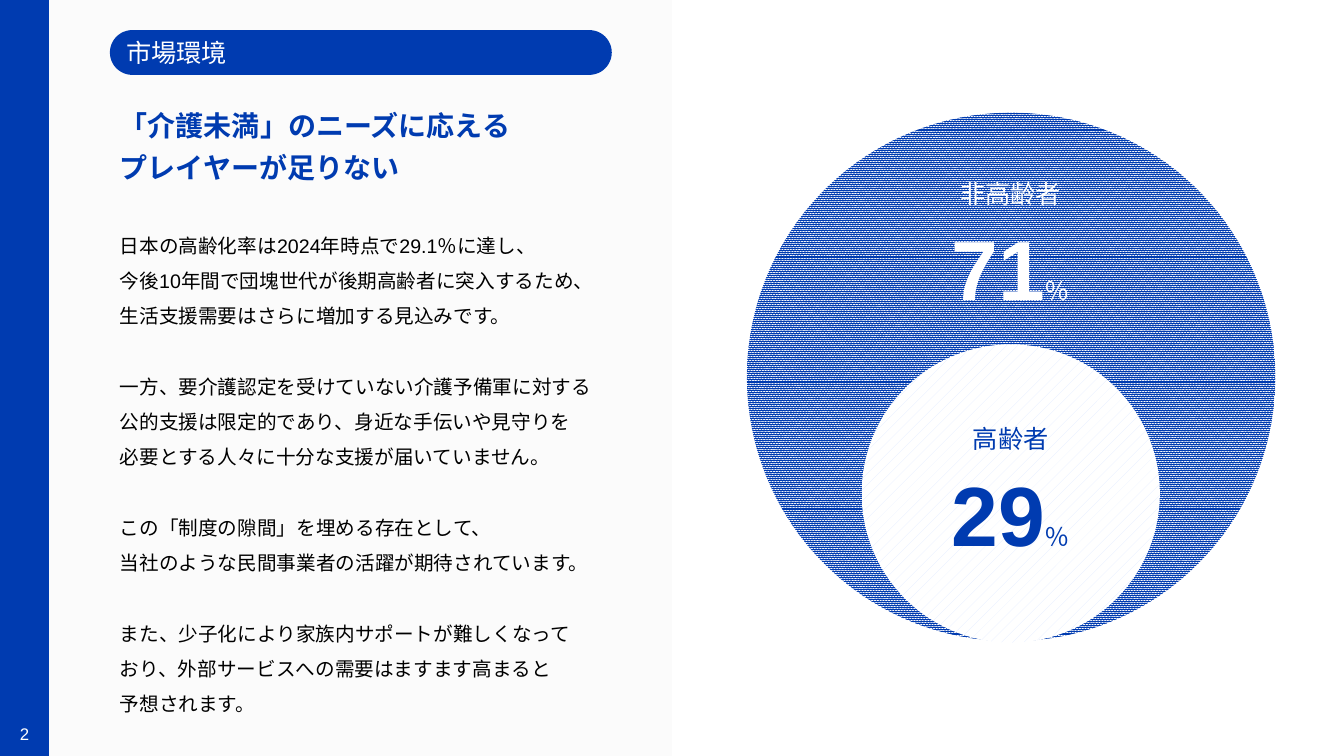
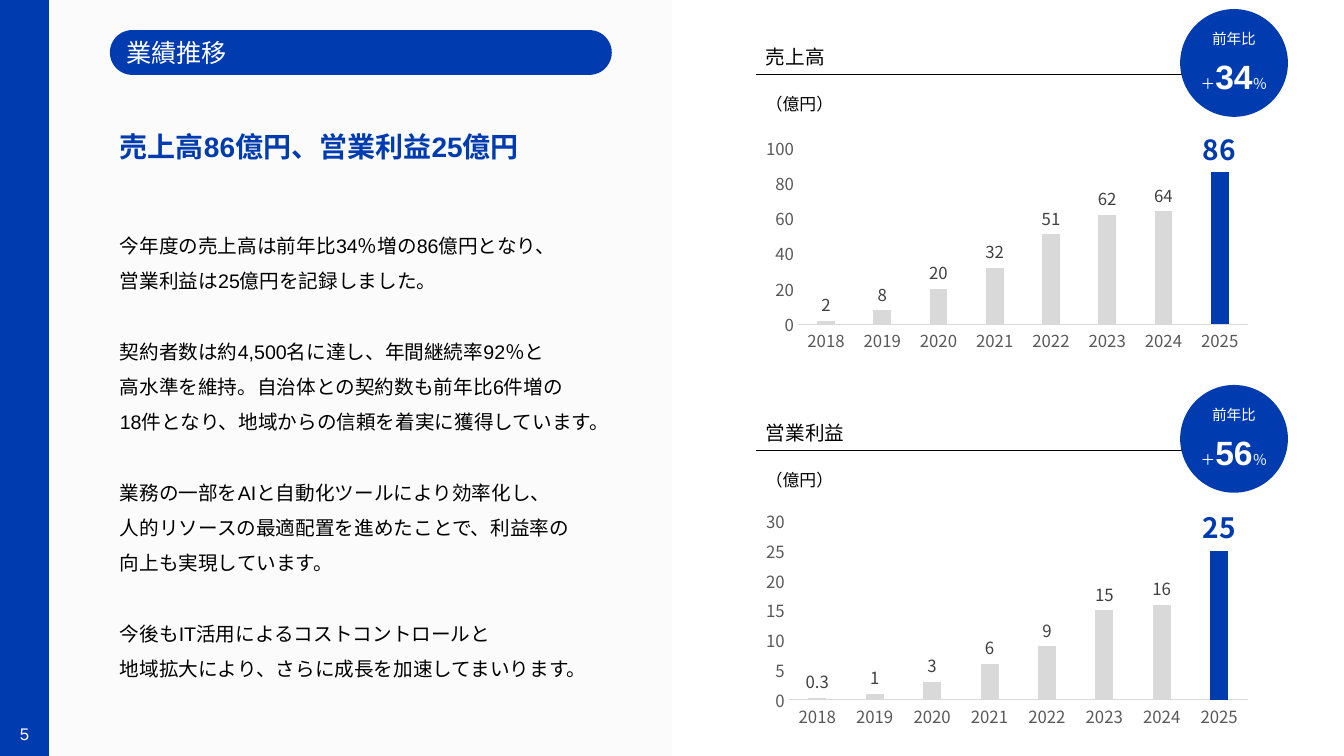
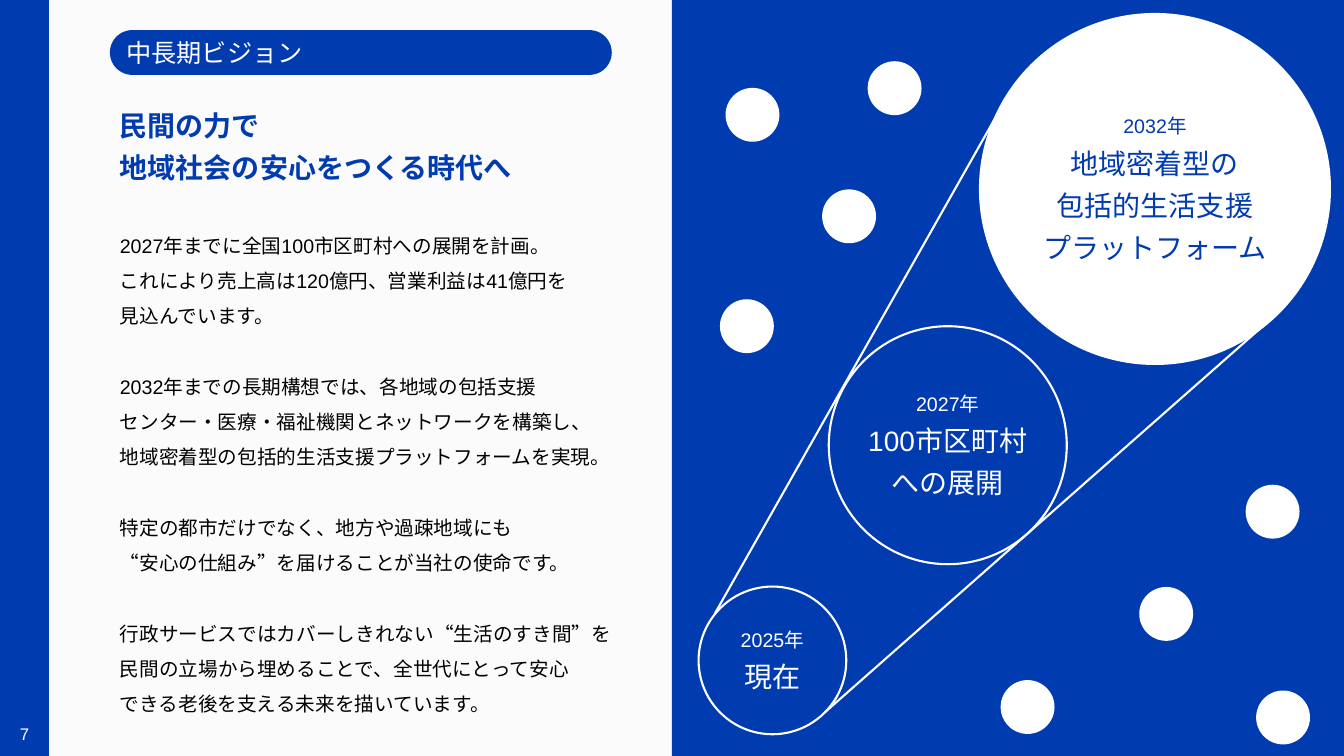
from lxml.etree import SubElement
from pptx import Presentation
from pptx.chart.data import CategoryChartData
from pptx.dml.color import RGBColor
from pptx.enum.chart import XL_CHART_TYPE as CT, XL_LABEL_POSITION as POS, XL_TICK_MARK as TICK
from pptx.enum.dml import MSO_PATTERN as PATTERN
from pptx.enum.shapes import MSO_CONNECTOR as CONN, MSO_SHAPE as SHAPE
from pptx.enum.text import MSO_ANCHOR as ANCHOR, PP_ALIGN as ALIGN
from pptx.oxml.ns import qn
from pptx.util import Pt

BLUE = RGBColor(0x00, 0x3B, 0xB0)
PALE_BLUE = RGBColor(0xE1, 0xEB, 0xFF)
PANEL = RGBColor(0xFB, 0xFB, 0xFB)
WHITE = RGBColor(0xFF, 0xFF, 0xFF)
BLACK = RGBColor(0x00, 0x00, 0x00)
BAR_GREY = RGBColor(0xD9, 0xD9, 0xD9)
AXIS_GREY = RGBColor(0x59, 0x59, 0x59)
LABEL_GREY = RGBColor(0x40, 0x40, 0x40)

LATIN = "Arial"
CJK = "Noto Sans CJK JP"
LINE = 1.2  # height of a single line, relative to the text size
YEARS = [str(year) for year in range(2018, 2026)]


class Deck:
    LEFT, COLUMN = 78.5, 358.5
    CHART_LEFT, CHART_WIDTH = 540, 358.5

    def __init__(self):
        self.prs = Presentation()
        self.prs.slide_width, self.prs.slide_height = Pt(960), Pt(540)
        self.s = None

    def new_slide(self, number, label, title, blocks):
        """Add a slide with its side bar, label pill, title and body text."""
        self.s = self.prs.slides.add_slide(self.prs.slide_layouts[6])
        self.shape(SHAPE.RECTANGLE, 35, 0, 445, 540, PANEL)
        pill = self.shape(SHAPE.ROUNDED_RECTANGLE, self.LEFT, 21.5, self.COLUMN, 32, BLUE)
        pill.adjustments[0] = 0.5
        self.fill_text(pill, [[(label, 18, False)]], WHITE)
        self.shape(SHAPE.RECTANGLE, 0, 0, 35, 540, BLUE)
        self.text(3, 512, 29, 24, [[(number, 12, False)]], WHITE, ALIGN.CENTER)
        self.text(self.LEFT, 73, self.COLUMN, 62.5,
                  [[(line, 20, True)] for line in title], BLUE)
        self.body(blocks)

    def body(self, blocks):
        lines = [line for block in blocks for line in block]
        sp = self.text(self.LEFT, 155, self.COLUMN, 362,
                       [[(line, 14, False)] for line in lines], BLACK,
                       anchor=ANCHOR.TOP, spacing=1.5, gap=0)
        sp.text_frame.margin_right = 0
        start = 0
        for block in blocks[:-1]:
            start += len(block)
            sp.text_frame.paragraphs[start].space_before = Pt(14 * LINE * 1.5)

    def shape(self, kind, x, y, w, h, fill=None, line=None):
        sp = self.s.shapes.add_shape(kind, Pt(x), Pt(y), Pt(w), Pt(h))
        sp.shadow.inherit = False
        if fill is None:
            sp.fill.background()
        else:
            sp.fill.solid()
            sp.fill.fore_color.rgb = fill
        if line is None:
            sp.line.fill.background()
        else:
            sp.line.color.rgb = line
            sp.line.width = Pt(1.5)
        return sp

    def circle(self, x, y, size, fill=None, line=None):
        return self.shape(SHAPE.OVAL, x, y, size, size, fill, line)

    def patterned_circle(self, x, y, size, pattern, color):
        sp = self.circle(x, y, size)
        sp.fill.patterned()
        sp.fill.pattern = pattern
        sp.fill.fore_color.rgb = color
        sp.fill.back_color.rgb = WHITE
        return sp

    def text(self, x, y, w, h, paras, color, align=ALIGN.LEFT, **style):
        sp = self.s.shapes.add_textbox(Pt(x), Pt(y), Pt(w), Pt(h))
        self.fill_text(sp, paras, color, align, **style)
        return sp

    def fill_text(self, sp, paras, color, align=ALIGN.LEFT, anchor=ANCHOR.MIDDLE,
                  wrap=True, spacing=1, gap=6):
        """Fill a shape with paragraphs, each a list of (text, size, bold) runs."""
        tf = sp.text_frame
        tf.word_wrap = wrap
        tf.vertical_anchor = anchor
        for i, runs in enumerate(paras):
            p = tf.add_paragraph() if i else tf.paragraphs[0]
            p.alignment = align
            p.line_spacing = Pt(max(size for _, size, _ in runs) * LINE * spacing)
            if i and gap:
                p.space_before = Pt(gap)
            for words, size, bold in runs:
                r = p.add_run()
                r.text = words
                r.font.size, r.font.bold = Pt(size), bold
                r.font.color.rgb = color
                r.font.name = LATIN
                SubElement(r.font._element, qn("a:ea")).set("typeface", CJK)

    def line(self, x1, y1, x2, y2, color, width):
        c = self.s.shapes.add_connector(CONN.STRAIGHT, Pt(x1), Pt(y1), Pt(x2), Pt(y2))
        c.line.color.rgb = color
        c.line.width = Pt(width)
        SubElement(c._element.spPr, qn("a:effectLst"))

    def column_chart(self, y, values, top, step):
        """Column chart that stresses its last year."""
        data = CategoryChartData()
        data.categories = YEARS
        data.add_series("Series 1", values)
        chart = self.s.shapes.add_chart(
            CT.COLUMN_CLUSTERED, Pt(self.CHART_LEFT), Pt(y),
            Pt(self.CHART_WIDTH), Pt(164), data).chart
        chart.has_legend = chart.has_title = False
        self.chart_font(chart.font, 10, BLACK)

        for axis in (chart.category_axis, chart.value_axis):
            axis.major_tick_mark = axis.minor_tick_mark = TICK.NONE
            axis.has_major_gridlines = False
            self.chart_font(axis.tick_labels.font, 12, AXIS_GREY)
        chart.category_axis.format.line.color.rgb = BAR_GREY
        chart.category_axis.format.line.width = Pt(0.75)
        chart.value_axis.format.line.fill.background()
        chart.value_axis.minimum_scale = 0
        chart.value_axis.maximum_scale = top
        chart.value_axis.major_unit = step

        plot = chart.plots[0]
        plot.gap_width, plot.overlap = 219, -27
        plot.vary_by_categories = False
        series = plot.series[0]
        last = series.points[len(values) - 1]
        for bar, color in ((series, BAR_GREY), (last, BLUE)):
            bar.format.fill.solid()
            bar.format.fill.fore_color.rgb = color
        labels = series.data_labels
        labels.show_value = True
        labels.position = POS.OUTSIDE_END
        self.chart_font(labels.font, 12, LABEL_GREY)
        self.chart_font(last.data_label.font, 20, BLUE, True)
        last.data_label.position = POS.OUTSIDE_END

    def chart_font(self, font, size, color, bold=False):
        font.name, font.size, font.bold = CJK, Pt(size), bold
        font.color.rgb = color

    def result(self, y, name, growth, values, top, step):
        """Headed chart with a badge for the growth on the year before."""
        x, w = self.CHART_LEFT, self.CHART_WIDTH
        self.column_chart(y + 85, values, top, step)
        self.text(x, y + 58.5, w, 18, [[("（億円）", 12, False)]], BLACK)
        self.text(x, y + 24, w, 20, [[(name, 14, False)]], BLACK)
        self.line(x, y + 47, x + w, y + 47, BLACK, 0.75)
        badge = self.circle(843, y, 77, BLUE)
        self.fill_text(badge, [[("前年比", 10.5, False)],
                               [("＋", 10.5, False), (growth, 24, True), ("％", 10.5, False)]],
                       WHITE, ALIGN.CENTER, wrap=False)


def share(name, percent):
    return [[(name, 18, False)], [(percent, 60, True), ("％", 18, False)]]


def market_slide(deck):
    deck.new_slide("2", "市場環境", ["「介護未満」のニーズに応える", "プレイヤーが足りない"], [
        ["日本の高齢化率は2024年時点で29.1％に達し、",
         "今後10年間で団塊世代が後期高齢者に突入するため、",
         "生活支援需要はさらに増加する見込みです。"],
        ["一方、要介護認定を受けていない介護予備軍に対する",
         "公的支援は限定的であり、身近な手伝いや見守りを",
         "必要とする人々に十分な支援が届いていません。"],
        ["この「制度の隙間」を埋める存在として、",
         "当社のような民間事業者の活躍が期待されています。"],
        ["また、少子化により家族内サポートが難しくなって",
         "おり、外部サービスへの需要はますます高まると",
         "予想されます。"]])
    deck.patterned_circle(533.5, 80.5, 377.5, PATTERN.PERCENT_90, BLUE)
    deck.text(622, 123.5, 200, 108, share("非高齢者", "71"), WHITE, ALIGN.CENTER,
              anchor=ANCHOR.TOP)
    elderly = deck.patterned_circle(615.5, 246, 213, PATTERN.PERCENT_10, PALE_BLUE)
    deck.fill_text(elderly, share("高齢者", "29"), BLUE, ALIGN.CENTER)


def results_slide(deck):
    deck.new_slide("5", "業績推移", ["売上高86億円、営業利益25億円"], [
        ["今年度の売上高は前年比34％増の86億円となり、",
         "営業利益は25億円を記録しました。"],
        ["契約者数は約4,500名に達し、年間継続率92％と",
         "高水準を維持。自治体との契約数も前年比6件増の",
         "18件となり、地域からの信頼を着実に獲得しています。"],
        ["業務の一部をAIと自動化ツールにより効率化し、",
         "人的リソースの最適配置を進めたことで、利益率の",
         "向上も実現しています。"],
        ["今後もIT活用によるコストコントロールと",
         "地域拡大により、さらに成長を加速してまいります。"]])
    deck.result(6.5, "売上高", "34", [2, 8, 20, 32, 51, 62, 64, 86], 100, 20)
    deck.result(275, "営業利益", "56", [0.3, 1, 3, 6, 9, 15, 16, 25], 30, 5)


def vision_slide(deck):
    deck.new_slide("7", "中長期ビジョン", ["民間の力で", "地域社会の安心をつくる時代へ"], [
        ["2027年までに全国100市区町村への展開を計画。",
         "これにより売上高は120億円、営業利益は41億円を",
         "見込んでいます。"],
        ["2032年までの長期構想では、各地域の包括支援",
         "センター・医療・福祉機関とネットワークを構築し、",
         "地域密着型の包括的生活支援プラットフォームを実現。"],
        ["特定の都市だけでなく、地方や過疎地域にも",
         "“安心の仕組み”を届けることが当社の使命です。"],
        ["行政サービスではカバーしきれない“生活のすき間”を",
         "民間の立場から埋めることで、全世代にとって安心",
         "できる老後を支える未来を描いています。"]])
    deck.shape(SHAPE.RECTANGLE, 480, 0, 480, 540, BLUE)
    stages = [
        (499, 419, 105.5, None, WHITE, "2025年", ["現在"]),
        (592, 233, 170, None, WHITE, "2027年", ["100市区町村", "への展開"]),
        (700, 10, 250, WHITE, BLUE, "2032年",
         ["地域密着型の", "包括的生活支援", "プラットフォーム"]),
    ]
    for x, y, size, fill, color, year, goal in stages:
        stage = deck.circle(x, y, size, fill, WHITE)
        deck.fill_text(stage, [[(year, 14, False)]] + [[(line, 20, False)] for line in goal],
                       color, ALIGN.CENTER, wrap=False)
    deck.line(510.5, 438.5, 717, 73.5, WHITE, 1.5)
    deck.line(589, 509, 906, 229.5, WHITE, 1.5)
    for x, y in [(519, 63.5), (620.5, 44.5), (515, 214.5), (588, 136),
                 (890.5, 347), (898, 494), (814.5, 420), (715.5, 486.5)]:
        deck.circle(x, y, 37, WHITE, WHITE)


def main():
    deck = Deck()
    market_slide(deck)
    results_slide(deck)
    vision_slide(deck)
    deck.prs.save("out.pptx")


if __name__ == "__main__":
    main()
